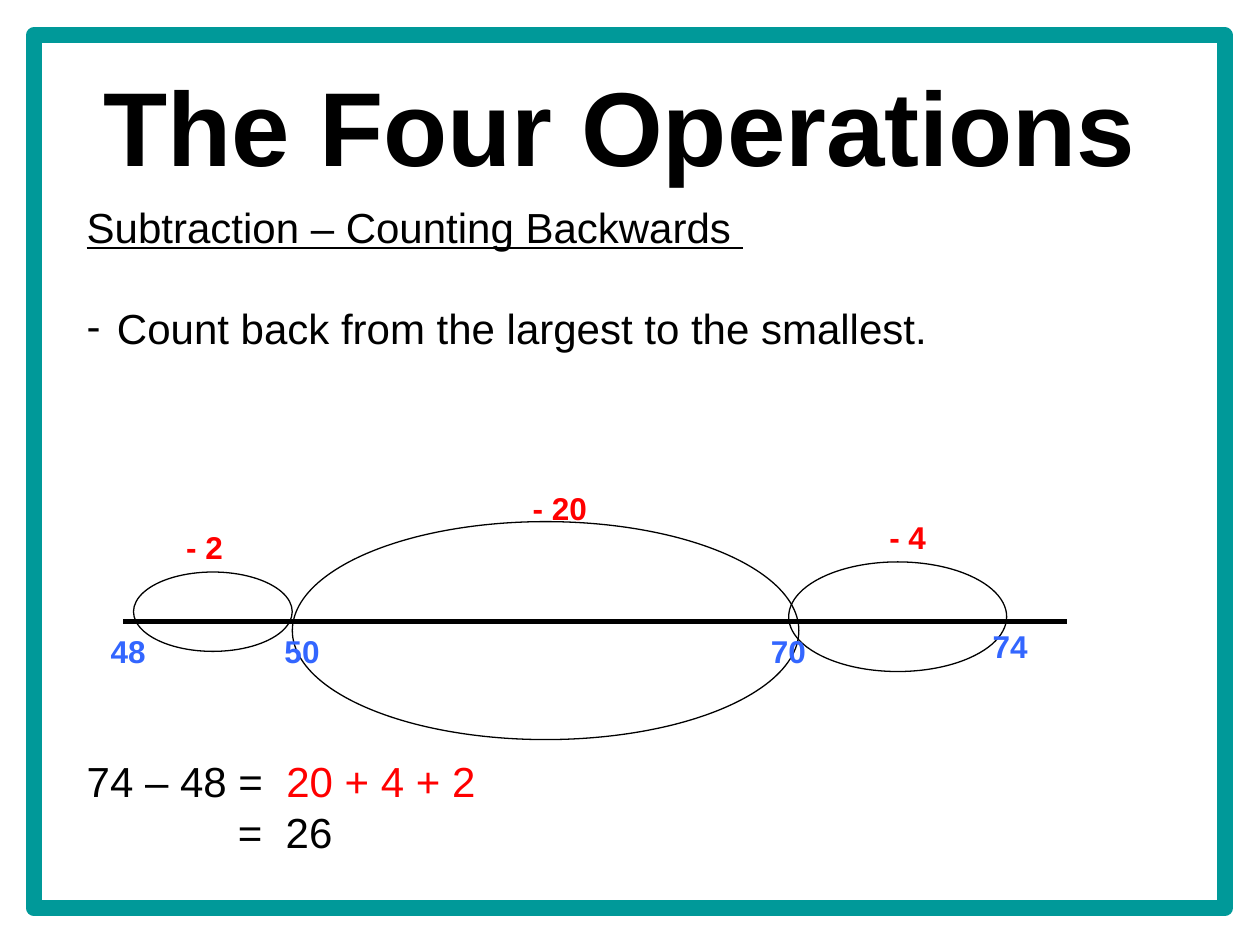
from dataclasses import dataclass

from lxml import etree
from pptx import Presentation
from pptx.dml.color import RGBColor
from pptx.enum.shapes import MSO_CONNECTOR, MSO_SHAPE
from pptx.enum.text import MSO_ANCHOR, PP_ALIGN
from pptx.oxml.ns import qn
from pptx.util import Inches, Pt

RECT, OVAL = MSO_SHAPE.RECTANGLE, MSO_SHAPE.OVAL
STRAIGHT = MSO_CONNECTOR.STRAIGHT
CENTER, TOP = PP_ALIGN.CENTER, MSO_ANCHOR.TOP


@dataclass(frozen=True)
class Theme:
    font: str = "Arial"
    ink: str = "000000"
    frame: str = "009999"
    jump: str = "FF0000"
    number: str = "3366FF"
    title: int = 60
    body: int = 24
    label: int = 18


THEME = Theme()
LINE_GAP = THEME.body * 1.2
AXIS_Y = 4.93
JUMPS = [
    (1.06, 4.54, 1.26, 0.63),
    (2.32, 4.14, 4.02, 1.73),
    (6.26, 4.46, 1.73, 0.87),
]
JUMP_LABELS = [("- 2", 1.38, 4.14), ("- 20", 4.13, 3.83), ("- 4", 6.96, 4.06)]
NUMBER_LABELS = [("48", 0.78, 4.97), ("50", 2.16, 4.97), ("70", 6.02, 4.97), ("74", 7.78, 4.93)]


def set_line(line, color, width):
    line.color.rgb = RGBColor.from_string(color)
    line.width = Pt(width)


def add_outline(s, kind, box, color, width):
    sp = s.shapes.add_shape(kind, *map(Inches, box))
    sp.shadow.inherit = False
    sp.fill.background()
    set_line(sp.line, color, width)


def add_axis(s, x1, x2, y):
    cx = s.shapes.add_connector(STRAIGHT, Inches(x1), Inches(y), Inches(x2), Inches(y))
    set_line(cx.line, THEME.ink, 3)
    etree.SubElement(cx._element.spPr, qn("a:effectLst"))


def add_run(p, text, size, color=THEME.ink, **formats):
    r = p.add_run()
    r.text = text
    r.font.color.rgb = RGBColor.from_string(color)
    for name, value in {"name": THEME.font, "size": Pt(size), **formats}.items():
        setattr(r.font, name, value)


def add_text_frame(s, box):
    tf = s.shapes.add_textbox(*map(Inches, box)).text_frame
    tf.word_wrap = True
    return tf


def add_title(s, text, box):
    sp = s.shapes.title
    for name, value in zip(("left", "top", "width", "height"), box):
        setattr(sp, name, Inches(value))
    tf = sp.text_frame
    tf.vertical_anchor = TOP
    p = tf.paragraphs[0]
    p.alignment = CENTER
    add_run(p, text, THEME.title, bold=True)


def add_label(s, text, left, top, color):
    width = 0.94 if len(text) > 3 else 0.63
    tf = add_text_frame(s, (left, top, width, 0.4))
    add_run(tf.paragraphs[0], text, THEME.label, color, bold=True)


def set_bullet(p, char, indent):
    pPr = p._p.get_or_add_pPr()
    pPr.set("marL", str(Inches(indent)))
    pPr.set("indent", str(-Inches(indent)))
    etree.SubElement(pPr, qn("a:buFont"), typeface=THEME.font)
    etree.SubElement(pPr, qn("a:buChar"), char=char)


def add_body(s, box):
    tf = add_text_frame(s, box)
    heading = tf.paragraphs[0]
    add_run(heading, "Subtraction – Counting Backwards ", THEME.body, underline=True)

    rule = tf.add_paragraph()
    rule.space_before = Pt(LINE_GAP)
    set_bullet(rule, "-", 0.24)
    add_run(rule, "Count back from the largest to the smallest.", THEME.body)

    working = tf.add_paragraph()
    working.space_before = Pt(8 * LINE_GAP)
    add_run(working, "74 – 48 =  ", THEME.body)
    add_run(working, "20 + 4 + 2", THEME.body, THEME.jump)

    answer = tf.add_paragraph()
    answer._p.get_or_add_pPr().set("marL", str(Inches(1.2)))
    add_run(answer, "=  26", THEME.body)


def main():
    prs = Presentation()
    prs.slide_width, prs.slide_height = Inches(10), Inches(7.5)
    s = prs.slides.add_slide(prs.slide_layouts[5])
    add_outline(s, RECT, (0.27, 0.28, 9.45, 6.93), THEME.frame, 9)
    add_title(s, "The Four Operations", (0.51, 0.44, 8.82, 1.1))
    add_body(s, (0.59, 1.55, 8.9, 5.35))
    add_axis(s, 0.98, 8.47, AXIS_Y)
    for box in JUMPS:
        add_outline(s, OVAL, box, THEME.ink, 0.75)
    for labels, color in ((JUMP_LABELS, THEME.jump), (NUMBER_LABELS, THEME.number)):
        for text, left, top in labels:
            add_label(s, text, left, top, color)
    prs.save("out.pptx")


if __name__ == "__main__":
    main()
